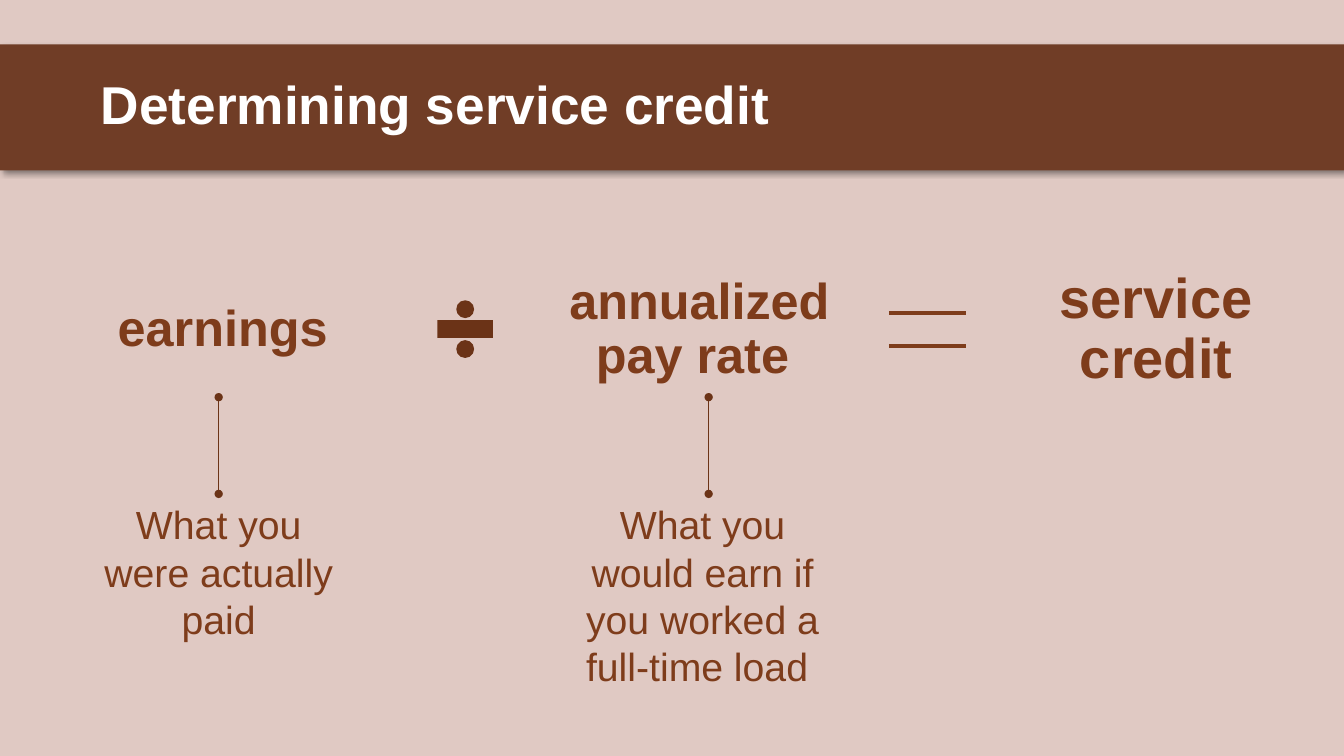
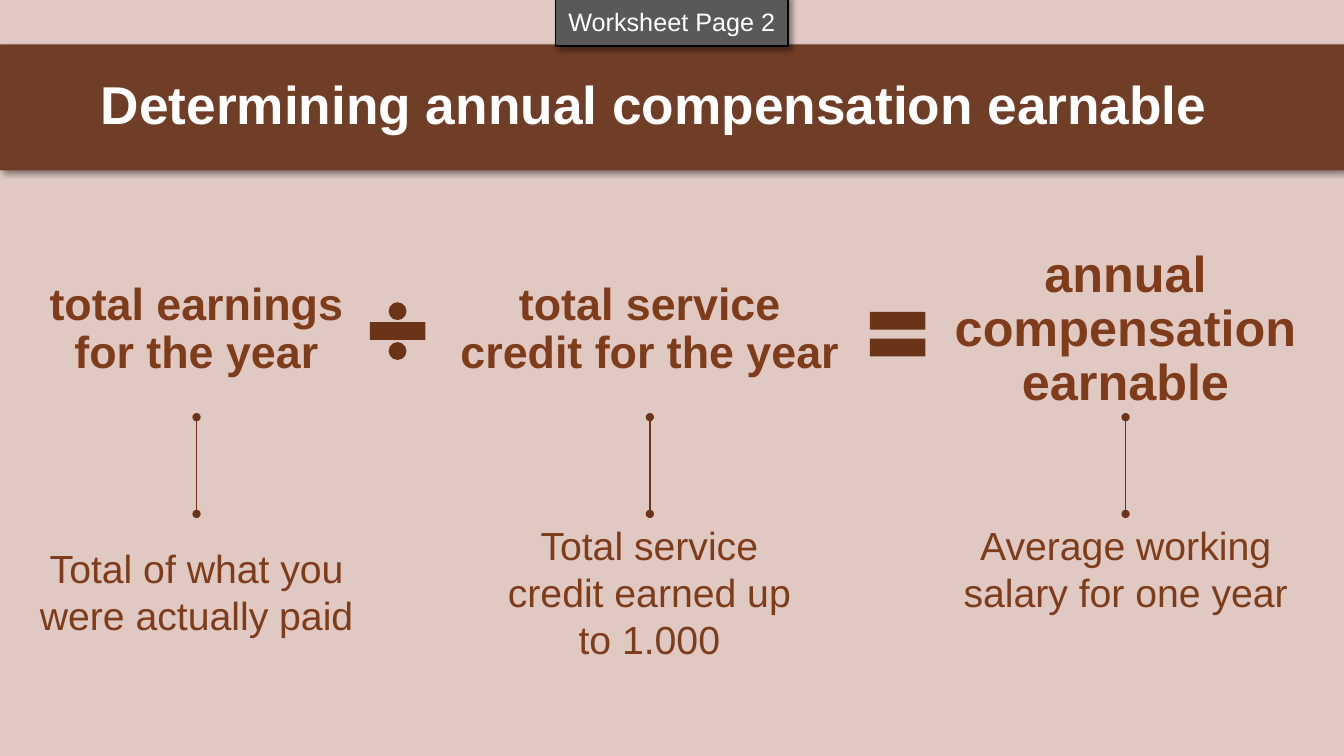
"""Build two slides that explain service credit and compensation earnable."""
from dataclasses import dataclass
from typing import Optional

from lxml.etree import SubElement
from pptx import Presentation
from pptx.dml.color import RGBColor as Rgb
from pptx.enum.shapes import MSO_CONNECTOR as Connector, MSO_SHAPE as Preset
from pptx.enum.text import MSO_ANCHOR as Anchor, MSO_AUTO_SIZE as Fit, PP_ALIGN as Align
from pptx.oxml.ns import qn
from pptx.util import Pt

COLORS = {
    "page": "E0C9C3",
    "band": "703D26",
    "dark": "6B3317",
    "text": "7E3C1B",
    "white": "FFFFFF",
    "tag": "595959",
    "black": "000000",
}
FONT = "Arial"
WIDTH, HEIGHT = 960, 540
BAND_TOP, BAND_HEIGHT = 31.7, 90
TERM_TOP, TERM_HEIGHT = 187.2, 97.2
STEM_LENGTH = 69.1
NOTE_LINE, NOTE_INSET = 34, 7.2
OPERATOR_SIZE = 54
DIVIDE_ADJUSTMENTS = (0.235, 0.029, 0.118)


@dataclass
class Note:
    text: str
    centre: float
    width: float
    lines: int
    stem: float
    gap: float = 1.4


@dataclass
class Term:
    text: str
    centre: float
    width: float
    size: float
    note: Optional[Note] = None


@dataclass
class Operator:
    preset: Preset
    left: float
    top: float


@dataclass
class Equation:
    title: str
    stem_top: float
    terms: list[Term]
    operators: list[Operator]
    bars: tuple[float, ...] = ()
    tag: str = ""


EQUATIONS = [
    Equation(
        "Determining service credit", 283.7,
        [
            Term("earnings", 159.1, 203, 36,
                 Note("What you were actually paid", 156.2, 198.7, 3, 156.2)),
            Term("annualized pay rate ", 499.7, 211.7, 36,
                 Note("What you would earn if you worked a full-time load ",
                      501.8, 198.7, 4, 506.2)),
            Term("service credit", 825.8, 203, 40),
        ],
        [Operator(Preset.MATH_DIVIDE, 305.3, 208.1)],
        bars=(223.4, 247.1),
    ),
    Equation(
        "Determining annual compensation earnable", 298,
        [
            Term("total earnings for the year", 140.4, 242, 32,
                 Note("Total of what you were actually paid", 140.4, 242, 2, 140.4, 18)),
            Term("total service credit for the year", 464.2, 296.6, 32,
                 Note("Total service credit earned up to 1.000", 463.8, 217.4, 3, 464.2)),
            Term("annual compensation earnable", 804, 273.6, 36,
                 Note("Average working salary for one year", 804, 254.2, 2, 804)),
        ],
        [Operator(Preset.MATH_DIVIDE, 257, 209.5), Operator(Preset.MATH_EQUAL, 614.2, 211.7)],
        tag="Worksheet Page 2",
    ),
]


def color(name: str) -> Rgb:
    """Look up a named colour."""
    return Rgb.from_string(COLORS[name])


def write(frame, text: str, *, size: float, tint: str = "text", bold: bool = False,
          align: Align = Align.CENTER, spacing: float = 1.0, anchor: Anchor = Anchor.TOP,
          insets: tuple[float, float, float, float] = (7.2, 3.6, 7.2, 3.6)) -> None:
    """Write one formatted paragraph into a text frame."""
    frame.word_wrap = True
    frame.auto_size = Fit.NONE
    frame.vertical_anchor = anchor
    frame.margin_left, frame.margin_top, frame.margin_right, frame.margin_bottom = map(Pt, insets)
    para = frame.paragraphs[0]
    para.alignment = align
    para.line_spacing = spacing
    span = para.add_run()
    span.text = text
    span.font.name = FONT
    span.font.size = Pt(size)
    span.font.bold = bold
    span.font.color.rgb = color(tint)


def add_box(page, left: float, top: float, width: float, height: float):
    """Add an empty text box and return its text frame."""
    return page.shapes.add_textbox(Pt(left), Pt(top), Pt(width), Pt(height)).text_frame


def add_shape(page, preset: Preset, left: float, top: float, width: float, height: float,
              *, fill: str, outline: str = "", shadow: bool = False):
    """Add a filled preset shape with an optional outline and shadow."""
    shape = page.shapes.add_shape(preset, Pt(left), Pt(top), Pt(width), Pt(height))
    shape.fill.solid()
    shape.fill.fore_color.rgb = color(fill)
    if outline:
        shape.line.color.rgb = color(outline)
        shape.line.width = Pt(1)
    else:
        shape.line.fill.background()
    shape.shadow.inherit = False
    if shadow:
        effects = shape.element.spPr.find(qn("a:effectLst"))
        outer = SubElement(effects, qn("a:outerShdw"), blurRad=str(Pt(4)), dist=str(Pt(3)),
                           dir="2700000", algn="tl", rotWithShape="0")
        tone = SubElement(outer, qn("a:srgbClr"), val=COLORS["black"])
        SubElement(tone, qn("a:alpha"), val="40000")
    return shape


def add_line(page, start: tuple[float, float], end: tuple[float, float],
             *, tint: str, width: float, dots: bool = False) -> None:
    """Draw a straight line, with round ends if asked."""
    line = page.shapes.add_connector(Connector.STRAIGHT, *map(Pt, start + end))
    line.line.color.rgb = color(tint)
    line.line.width = Pt(width)
    properties = line.element.spPr
    if dots:
        stroke = properties.find(qn("a:ln"))
        for name in ("a:headEnd", "a:tailEnd"):
            SubElement(stroke, qn(name), type="oval")
    SubElement(properties, qn("a:effectLst"))


def style_layout(layout, page) -> None:
    """Give the layout its background, title band and title position."""
    layout.background.fill.solid()
    layout.background.fill.fore_color.rgb = color("page")
    band = add_shape(page, Preset.RECTANGLE, 0, BAND_TOP, WIDTH, BAND_HEIGHT,
                     fill="band", shadow=True)
    layout.shapes.element.insert(2, band.element)
    title = layout.placeholders[0]
    title.left, title.top = Pt(0), Pt(BAND_TOP)
    title.width, title.height = Pt(WIDTH), Pt(BAND_HEIGHT)


def add_term(page, term: Term, stem_top: float) -> None:
    """Draw a term with its stem and note."""
    frame = add_box(page, term.centre - term.width / 2, TERM_TOP, term.width, TERM_HEIGHT)
    write(frame, term.text, size=term.size, bold=True, spacing=0.9,
          anchor=Anchor.MIDDLE, insets=(10, 7.2, 10, 7.2))
    note = term.note
    if note is None:
        return
    stem_end = stem_top + STEM_LENGTH
    add_line(page, (note.stem, stem_top), (note.stem, stem_end), tint="dark", width=1, dots=True)
    frame = add_box(page, note.centre - note.width / 2, stem_end + note.gap,
                    note.width, note.lines * NOTE_LINE + NOTE_INSET)
    write(frame, note.text, size=28)


def add_equation(page, equation: Equation) -> None:
    """Fill a slide with one equation."""
    write(page.shapes.title.text_frame, equation.title, size=38, tint="white", bold=True,
          align=Align.LEFT, spacing=0.9, anchor=Anchor.MIDDLE, insets=(72, 3.6, 7.2, 3.6))
    for term in equation.terms:
        add_term(page, term, equation.stem_top)
    for operator in equation.operators:
        sign = add_shape(page, operator.preset, operator.left, operator.top,
                         OPERATOR_SIZE, OPERATOR_SIZE, fill="dark")
        if operator.preset == Preset.MATH_DIVIDE:
            for index, value in enumerate(DIVIDE_ADJUSTMENTS):
                sign.adjustments[index] = value
    for height in equation.bars:
        add_line(page, (635, height), (690, height), tint="text", width=3)
    if equation.tag:
        tag = add_shape(page, Preset.RECTANGLE, 396.7, -3, 166.3, 36,
                        fill="tag", outline="black", shadow=True)
        write(tag.text_frame, equation.tag, size=18, tint="white", anchor=Anchor.MIDDLE)


def main() -> None:
    """Build and save the deck."""
    deck = Presentation()
    deck.slide_width, deck.slide_height = Pt(WIDTH), Pt(HEIGHT)
    layout = deck.slide_layouts[5]
    pages = [deck.slides.add_slide(layout) for _ in EQUATIONS]
    style_layout(layout, pages[0])
    for page, equation in zip(pages, EQUATIONS):
        add_equation(page, equation)
    deck.save("out.pptx")


if __name__ == "__main__":
    main()
